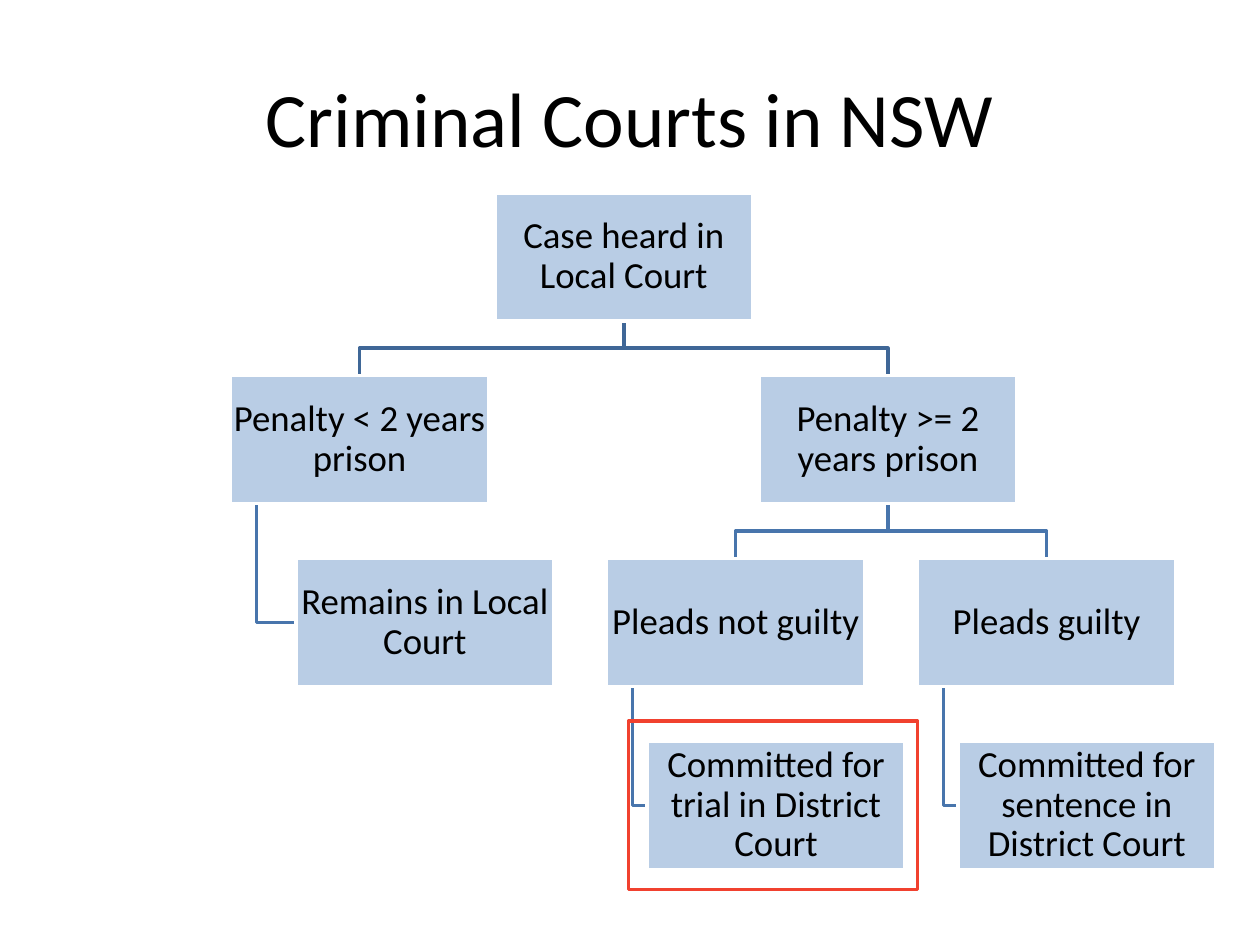
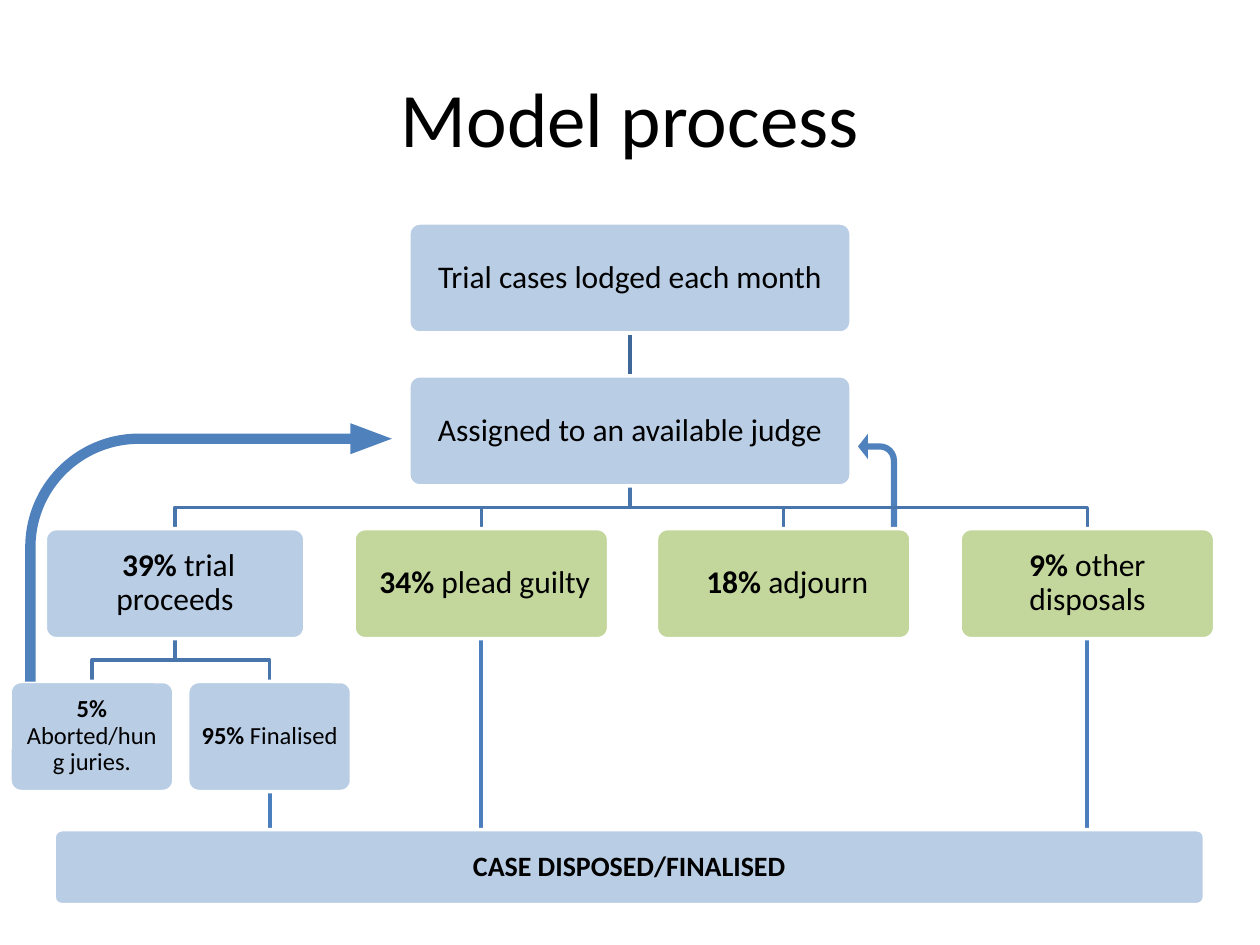
from lxml.etree import SubElement
from pptx import Presentation
from pptx.dml.color import RGBColor
from pptx.enum.shapes import MSO_CONNECTOR as Wire, MSO_SHAPE as Kind
from pptx.enum.text import MSO_ANCHOR as Anchor, PP_ALIGN as Align
from pptx.oxml.ns import qn
from pptx.util import Inches, Pt

FONT = "Calibri"
BLACK, WHITE, RED = "000000", "FFFFFF", "F1412F"
BLUE, GREEN = "B9CDE5", "C3D69B"
DARK, MID, LINK, ARROW = "3F6797", "4875AC", "4B7EBC", "4F81BD"

# The slide is a grid of 10 columns by 7.5 rows
WIDE, HIGH = Inches(10), Inches(7.5)
COL, ROW = WIDE / 10, HIGH / 7.5


def tint(code):
    return RGBColor.from_string(code)


def cell(box, cols, rows, place):
    """Turn a place in a box of cols by rows into slide lengths."""
    left, top, wide, high = box
    x, y, w, h = place
    dx, dy = wide / cols, high / rows
    return [int(n) for n in ((left + x * dx) * COL, (top + y * dy) * ROW,
                             w * dx * COL, h * dy * ROW)]


def style(run, size, bold=False):
    font = run.font
    font.name, font.size, font.bold = FONT, Pt(size), bold
    font.color.rgb = tint(BLACK)


def ink(shape, fill=None, line=None, width=2):
    """Set fill and outline; None means empty."""
    shape.shadow.inherit = False
    if fill:
        shape.fill.solid()
        shape.fill.fore_color.rgb = tint(fill)
    else:
        shape.fill.background()
    if line:
        shape.line.color.rgb = tint(line)
        shape.line.width = Pt(width)
    else:
        shape.line.fill.background()


def back(shape):
    """Send a shape behind the others."""
    item = shape._element
    item.getparent().insert(2, item)


def page(deck, name):
    slide = deck.slides.add_slide(deck.slide_layouts[5])
    title = slide.shapes.title
    title.left, title.top, title.width, title.height = cell(
        (0, 0, 10, 7.5), 10, 7.5, (0.5, 0.3, 9, 1.25))
    frame = title.text_frame
    frame.text = name
    frame.vertical_anchor = Anchor.MIDDLE
    frame.paragraphs[0].alignment = Align.CENTER
    style(frame.paragraphs[0].runs[0], 44)
    return slide


def node(slide, spot, kind, fill, size, pad, text, bold=""):
    """Draw a box with an optional bold start to its text."""
    shape = slide.shapes.add_shape(kind, *spot)
    ink(shape, fill, WHITE)
    if kind == Kind.ROUNDED_RECTANGLE:
        shape.adjustments[0] = 0.1
    frame = shape.text_frame
    frame.word_wrap = True
    frame.vertical_anchor = Anchor.MIDDLE
    frame.margin_left = frame.margin_right = Inches(pad)
    frame.margin_top = frame.margin_bottom = Inches(pad)
    para = frame.paragraphs[0]
    para.alignment, para.line_spacing = Align.CENTER, 0.9
    for part, heavy in ((bold, True), (text, False)):
        if part:
            run = para.add_run()
            run.text = part
            style(run, size, heavy)
    return shape


def trace(slide, points, color):
    """Draw an open bent line behind the boxes."""
    build = slide.shapes.build_freeform(*points[0])
    build.add_line_segments(points[1:], close=False)
    shape = build.convert_to_shape()
    ink(shape, None, color)
    back(shape)


def fork(slide, head, child, color):
    """Link the foot of a box to the top of its child."""
    x, y = head.left + head.width // 2, head.top + head.height
    end = child.left + child.width // 2
    mid = (y + child.top) // 2
    trace(slide, [(x, y), (x, mid), (end, mid), (end, child.top)], color)


def hook(slide, head, child, color):
    """Link the foot of a box to the left side of its child."""
    x, y = head.left + head.width // 10, head.top + head.height
    mid = child.top + child.height // 2
    trace(slide, [(x, y), (x, mid), (child.left, mid)], color)


def drop(slide, head, goal, color, width):
    """Run a straight line down from a box to the top of another."""
    x = head.left + head.width // 2
    wire = slide.shapes.add_connector(
        Wire.STRAIGHT, x, head.top + head.height, x, goal.top)
    wire.begin_connect(head, 2)
    if abs(goal.left + goal.width // 2 - x) < Pt(1):
        wire.end_connect(goal, 0)
    wire.line.color.rgb = tint(color)
    wire.line.width = Pt(width)
    SubElement(wire._element.spPr, qn("a:effectLst"))
    back(wire)


def bend(slide, spot, shares, flip=False):
    shape = slide.shapes.add_shape(Kind.BENT_ARROW, *spot)
    for i, share in enumerate(shares):
        shape.adjustments[i] = share
    ink(shape, ARROW)
    if flip:
        shape._element.spPr.xfrm.set("flipH", "1")
    return shape


def courts(slide, box):
    """Tree of courts; each box is 0.83 columns by 0.7 rows."""
    cols, rows = 3.17, 3.7
    cases = {
        "case": (0.85, 0, "Case heard in Local Court"),
        "short": (0, 1, "Penalty < 2 years prison"),
        "local": (0.21, 2, "Remains in Local Court"),
        "long": (1.7, 1, "Penalty >= 2 years prison"),
        "deny": (1.21, 2, "Pleads not guilty"),
        "trial": (1.34, 3, "Committed for trial in District Court"),
        "admit": (2.21, 2, "Pleads guilty"),
        "term": (2.34, 3, "Committed for sentence in District Court"),
    }
    nodes = {
        key: node(slide, cell(box, cols, rows, (x, y, 0.83, 0.7)),
                  Kind.RECTANGLE, BLUE, 21, 0.01, text)
        for key, (x, y, text) in cases.items()}
    # Links
    for join, head, child, color in (
            (fork, "case", "short", DARK), (fork, "case", "long", DARK),
            (fork, "long", "deny", MID), (fork, "long", "admit", MID),
            (hook, "short", "local", MID), (hook, "deny", "trial", MID),
            (hook, "admit", "term", MID)):
        join(slide, nodes[head], nodes[child], color)
    # Frame around the trial box
    frame = slide.shapes.add_shape(
        Kind.RECTANGLE, *cell(box, cols, rows, (1.28, 2.89, 0.93, 0.92)))
    ink(frame, None, RED)


def process(slide, box):
    """Flow of trial cases, with centres given in columns."""
    cols, rows = 10, 4.46

    def place(*spot):
        return cell(box, cols, rows, spot)

    # Boxes: middle, row, width, fill, size, inset, bold, text
    cases = {
        "lodge": (5, 0, 3.51, BLUE, 18, 0.1, "",
                  "Trial cases lodged each month"),
        "judge": (5, 1, 3.51, BLUE, 18, 0.1, "",
                  "Assigned to an available judge"),
        "trial": (1.39, 2, 2.06, BLUE, 18, 0.1, " 39%", " trial proceeds"),
        "plead": (3.82, 2, 2.02, GREEN, 18, 0.1, " 34%", " plead guilty"),
        "wait": (6.22, 2, 2.02, GREEN, 18, 0.1, " 18%", " adjourn"),
        "other": (8.63, 2, 2.02, GREEN, 18, 0.1, "9%", " other disposals"),
        "hung": (0.73, 3, 1.3, BLUE, 14, 0.08, "5% ",
                 "Aborted/hung juries."),
        "done": (2.14, 3, 1.3, BLUE, 14, 0.08, "95%", " Finalised"),
    }
    nodes = {
        key: node(slide, place(mid - wide / 2, row, wide, 0.72),
                  Kind.ROUNDED_RECTANGLE, fill, size, pad, text, bold)
        for key, (mid, row, wide, fill, size, pad, bold, text)
        in cases.items()}
    final = node(slide, place(0.43, 3.97, 9.13, 0.49),
                 Kind.ROUNDED_RECTANGLE, BLUE, 16, 0.1, "",
                 "CASE DISPOSED/FINALISED")
    # Links
    drop(slide, nodes["lodge"], nodes["judge"], DARK, 2)
    for head, kids in (("judge", ("trial", "plead", "wait", "other")),
                       ("trial", ("hung", "done"))):
        for child in kids:
            fork(slide, nodes[head], nodes[child], MID)
    for head in ("plead", "other", "done"):
        drop(slide, nodes[head], final, LINK, 2.25)
    # Arrows back to the judge
    bend(slide, place(0.2, 1.31, 2.91, 1.69), (0.04, 0.06, 0.16, 0.44))
    back(bend(slide, place(6.81, 1.38, 0.31, 0.65),
              (0.16, 0.32, 0.25, 0.44), True))
    # Heavy type for the last step
    final.text_frame.paragraphs[0].runs[0].font.bold = True


def main():
    deck = Presentation()
    deck.slide_width, deck.slide_height = WIDE, HIGH
    courts(page(deck, "Criminal Courts in NSW"), (1.83, 1.53, 7.82, 5.37))
    process(page(deck, "Model process"), (0, 1.77, 10, 5.41))
    deck.save("out.pptx")


if __name__ == "__main__":
    main()
